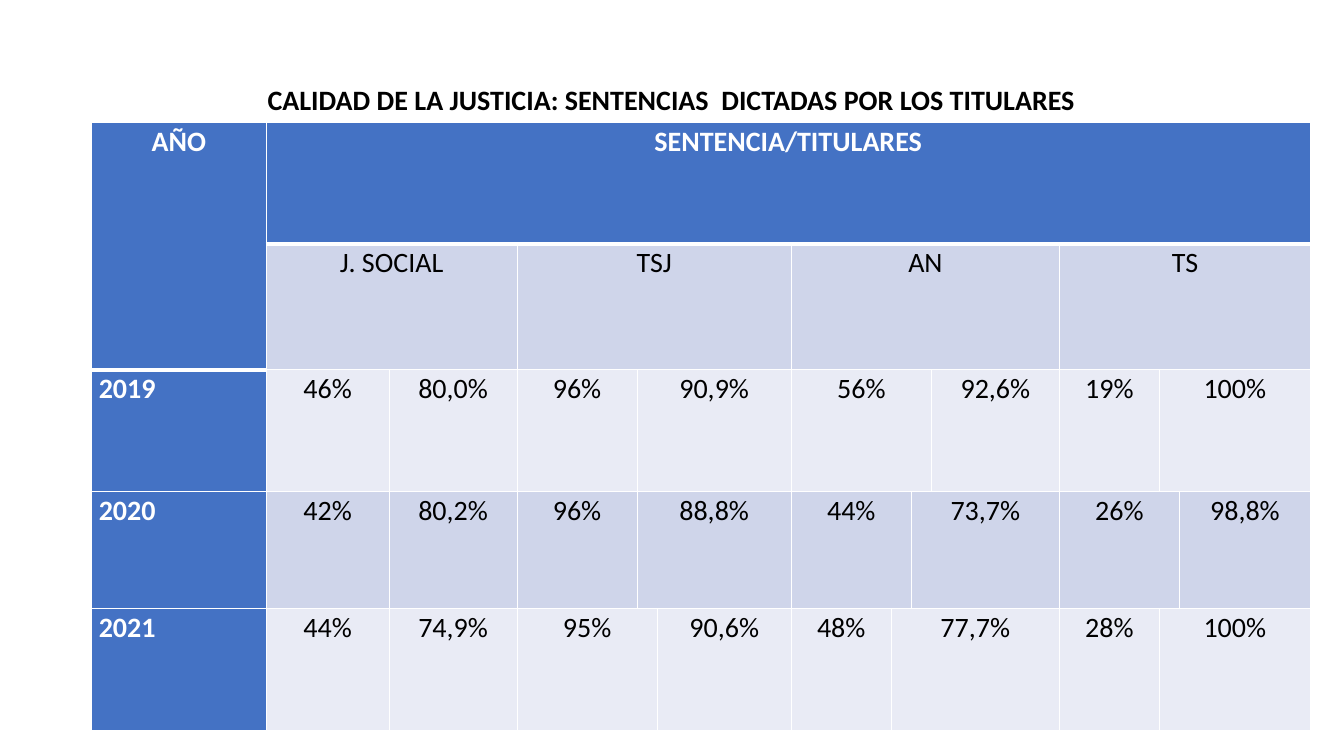
from pptx import Presentation
from pptx import util as u
from pptx.dml.color import RGBColor
from pptx.enum import text
from lxml import etree

NS = "http://schemas.openxmlformats.org/drawingml/2006/main"
BLUE, BAND, PALE = "4472C4", "CFD5EA", "E9EBF5"
WHITE, BLACK = "FFFFFF", "000000"
CENTER, LEFT = text.PP_ALIGN.CENTER, text.PP_ALIGN.LEFT


def write(frame, words, color, bold, paragraph_format):
    para = frame.paragraphs[0]
    for name, value in paragraph_format.items():
        setattr(para, name, value)
    span = para.add_run()
    span.text = words
    for name, value in {"name": "Calibri", "size": u.Pt(20), "bold": bold}.items():
        setattr(span.font, name, value)
    span.font.color.rgb = RGBColor.from_string(color)


def dress(cell, fill, top, bottom):
    cell.fill.solid()
    cell.fill.fore_color.rgb = RGBColor.from_string(fill)
    widths = {"lnL": 1, "lnR": 1, "lnT": top, "lnB": bottom}
    properties = cell._tc.get_or_add_tcPr()
    for place, (tag, points) in enumerate(widths.items()):
        line = etree.Element(f"{{{NS}}}{tag}", w=str(u.Pt(points)))
        solid = etree.SubElement(line, f"{{{NS}}}solidFill")
        etree.SubElement(solid, f"{{{NS}}}srgbClr", val=WHITE)
        properties.insert(place, line)


deck = Presentation()
deck.slide_width, deck.slide_height = u.Inches(13.33), u.Inches(7.5)
page = deck.slides.add_slide(deck.slide_layouts[5])

# Title
title = page.shapes.title
place = {"left": 0.91, "top": 0.25, "width": 11.5, "height": 0.96}
for name, inches in place.items():
    setattr(title, name, u.Inches(inches))
title.text_frame.vertical_anchor = text.MSO_ANCHOR.BOTTOM
title.text_frame.word_wrap = True
write(title.text_frame, "CALIDAD DE LA JUSTICIA: SENTENCIAS  DICTADAS POR LOS TITULARES",
      BLACK, True, {"alignment": CENTER, "line_spacing": 0.9})

# Table grid
columns = [1.73, 1.22, 1.27, 1.19, 0.2, 1.33, 0.99, 0.2, 0.2, 1.27, 0.99, 0.2, 1.3]
heights = [1.21, 1.25, 1.21, 1.16, 1.21]
table = page.shapes.add_table(len(heights), len(columns), u.Inches(0.91), u.Inches(1.21),
                              u.Inches(sum(columns)), u.Inches(sum(heights))).table
for column, width in zip(table.columns, columns):
    column.width = u.Inches(width)
for row, height in zip(table.rows, heights):
    row.height = u.Inches(height)

# Each row: its band colour, then every entry with the columns it spans
rows = [
    (BLUE, [("AÑO", 1), ("SENTENCIA/TITULARES", 12)]),
    (BAND, [("", 1), ("J. SOCIAL", 2), ("TSJ", 3), ("AN", 4), ("TS", 3)]),
    (PALE, [("2019", 1), ("46%", 1), ("80,0%", 1), ("96%", 1), ("90,9%", 2),
            ("56%", 3), ("92,6%", 1), ("19%", 1), ("100%", 2)]),
    (BAND, [("2020", 1), ("42%", 1), ("80,2%", 1), ("96%", 1), ("88,8%", 2),
            ("44%", 2), ("73,7%", 2), ("26%", 2), ("98,8%", 1)]),
    (PALE, [("2021", 1), ("44%", 1), ("74,9%", 1), ("95%", 2), ("90,6%", 1),
            ("48%", 1), ("77,7%", 3), ("28%", 1), ("100%", 2)]),
]
margins = {"margin_left": 0.07, "margin_right": 0.07, "margin_top": 0, "margin_bottom": 0}

for r, (band, entries) in enumerate(rows):
    c = 0
    for words, width in entries:
        heading = r == 0 or c == 0
        last_header = 1 if c == 0 else 0
        for k in range(c, c + width):
            dress(table.cell(r, k), BLUE if heading else band,
                  3 if r == last_header + 1 else 1, 3 if r == last_header else 1)
        cell = table.cell(r, c)
        for name, inches in margins.items():
            setattr(cell, name, u.Inches(inches))
        if words:
            write(cell.text_frame, words, WHITE if heading else BLACK, heading,
                  {"alignment": LEFT if c == 0 and r > 1 else CENTER,
                   "line_spacing": 1.07, "space_after": u.Pt(8)})
        if width > 1:
            cell.merge(table.cell(r, c + width - 1))
        c += width

# The year heading covers both header rows
table.cell(0, 0).merge(table.cell(1, 0))

deck.save("out.pptx")
